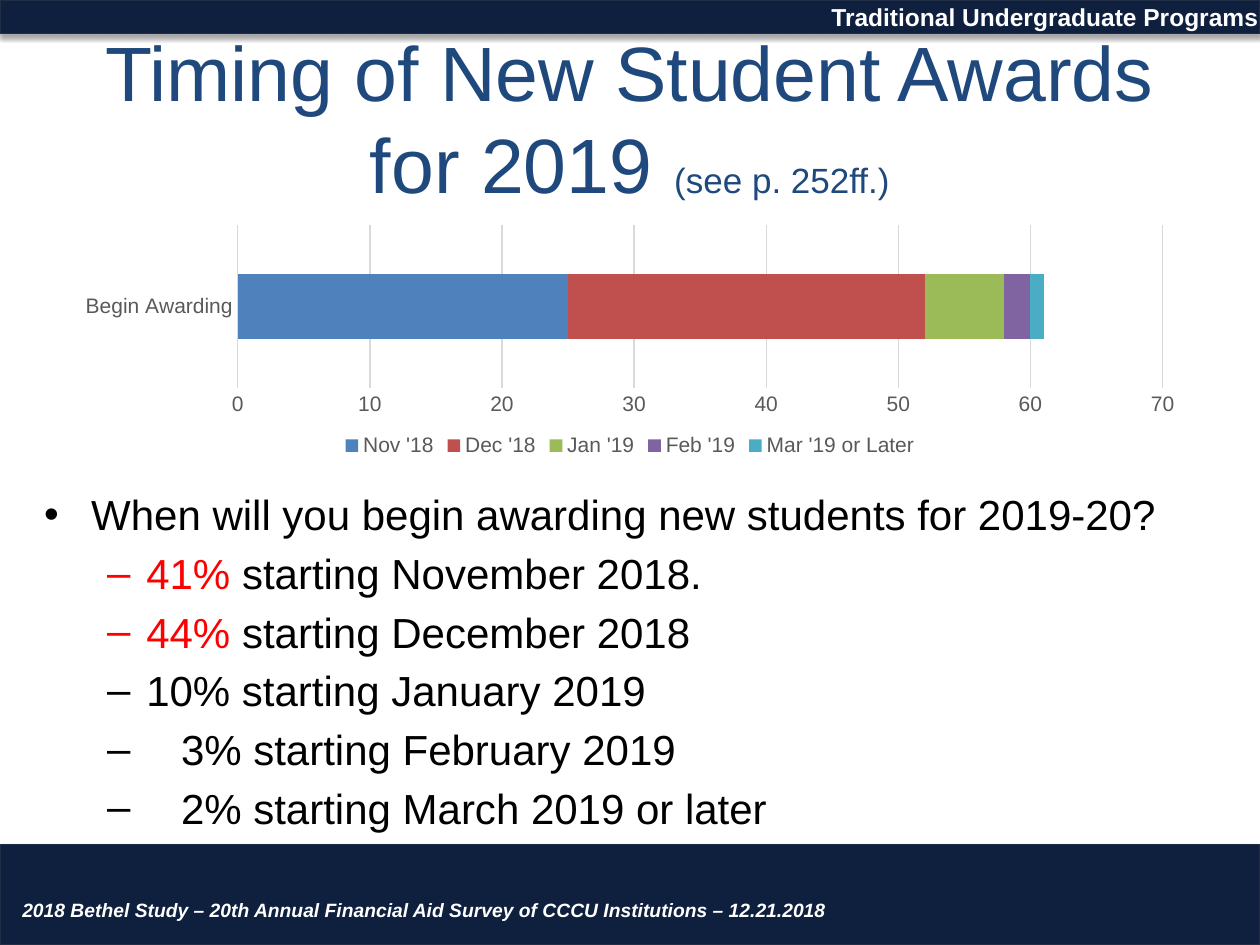
from lxml import etree
from pptx import Presentation
from pptx.chart.data import CategoryChartData
from pptx.dml.color import RGBColor
from pptx.enum.chart import XL_CHART_TYPE as ChartType, XL_LEGEND_POSITION as LegendPosition
from pptx.enum.chart import XL_TICK_MARK as TickMark
from pptx.enum.shapes import MSO_SHAPE as Preset
from pptx.enum.text import MSO_ANCHOR as Anchor, PP_ALIGN as Align
from pptx.oxml.ns import qn
from pptx.util import Cm, Pt

FONT = "Arial"
NAVY, NAVY_EDGE, TITLE_BLUE = "0E203E", "222D46", "1F497D"
BLACK, WHITE, RED, GREY, PALE = "000000", "FFFFFF", "FF0000", "595959", "D9D9D9"

BARS = [(0, 0, 25.4, 0.68), (0, 17.02, 25.4, 2.03)]
TITLE = [("Timing of New Student Awards for 2019 ", {"size": 44}),
         ("(see p. 252ff.)", {"size": 20})]
FOOTER = "2018 Bethel Study – 20th Annual Financial Aid Survey of CCCU Institutions – 12.21.2018"
HEADER = "Traditional Undergraduate Programs"

CATEGORY = "Begin Awarding"
SERIES = [
    ("Nov '18", 25, "4F81BD"),
    ("Dec '18", 27, "C0504D"),
    ("Jan '19", 6, "9BBB59"),
    ("Feb '19", 2, "8064A2"),
    ("Mar '19 or Later", 1, "4BACC6"),
]

# Bullet style: character, level, text start and hanging distance in cm
QUESTION = ("•", 0, 0.95, 0.95)
ANSWER = ("–", 1, 2.06, 0.79)
SMALL_ANSWER = ("–", 1, 2.76, 1.49)
HIGHLIGHT = {"color": RED}
BULLETS = [
    (QUESTION, [("When will you begin awarding new students for 2019-20?", {})]),
    (ANSWER, [("41%", HIGHLIGHT), (" starting November 2018.", {})]),
    (ANSWER, [("44% ", HIGHLIGHT), ("starting December 2018", {})]),
    (ANSWER, [("10% starting January 2019", {})]),
    (SMALL_ANSWER, [("3% starting February 2019", {})]),
    (SMALL_ANSWER, [("2% starting March 2019 or later", {})]),
]


def rgb(value):
    return RGBColor.from_string(value)


def set_font(font, size, color, bold=False, italic=False):
    font.name, font.size = FONT, Pt(size)
    font.bold, font.italic = bold, italic
    font.color.rgb = rgb(color)


def write(paragraph, text, size=24, color=BLACK, bold=False, italic=False):
    run = paragraph.add_run()
    run.text = text
    set_font(run.font, size, color, bold, italic)


def add_text_frame(slide, box, anchor=Anchor.TOP):
    frame = slide.shapes.add_textbox(*map(Cm, box)).text_frame
    frame.word_wrap = True
    frame.vertical_anchor = anchor
    return frame


def add_bar(slide, box):
    """Add a navy band with a soft shadow below it."""
    shape = slide.shapes.add_shape(Preset.RECTANGLE, *map(Cm, box))
    shape.shadow.inherit = False
    shape.fill.solid()
    shape.fill.fore_color.rgb = rgb(NAVY)
    shape.line.color.rgb = rgb(NAVY_EDGE)
    shape.line.width = Pt(0.75)
    effects = shape._element.spPr.find(qn("a:effectLst"))
    shadow = etree.SubElement(effects, qn("a:outerShdw"), blurRad=str(Pt(3.1)),
                              dist=str(Pt(1.8)), dir="5400000", rotWithShape="0")
    color = etree.SubElement(shadow, qn("a:srgbClr"), val=BLACK)
    etree.SubElement(color, qn("a:alpha"), val="35000")


def set_bullet(paragraph, character, level, start, hanging):
    paragraph.level = level
    properties = paragraph._p.get_or_add_pPr()
    properties.set("marL", str(Cm(start)))
    properties.set("indent", str(-Cm(hanging)))
    etree.SubElement(properties, qn("a:buFont"), typeface=FONT)
    etree.SubElement(properties, qn("a:buChar"), char=character)


def add_bullets(slide, box):
    frame = add_text_frame(slide, box)
    for index, (style, runs) in enumerate(BULLETS):
        paragraph = frame.add_paragraph() if index else frame.paragraphs[0]
        set_bullet(paragraph, *style)
        paragraph.space_before = Pt(4.7 if index else 0)
        for text, style_changes in runs:
            write(paragraph, text, **style_changes)


def add_award_chart(slide, box):
    data = CategoryChartData()
    data.categories = [CATEGORY]
    for name, value, _ in SERIES:
        data.add_series(name, [value])
    chart = slide.shapes.add_chart(ChartType.BAR_STACKED, *map(Cm, box), data).chart
    chart.has_title = False
    set_font(chart.font, 12, GREY)

    plot = chart.plots[0]
    plot.gap_width, plot.overlap = 150, 100
    plot.vary_by_categories = False
    for series, (_, _, color) in zip(plot.series, SERIES):
        series.format.fill.solid()
        series.format.fill.fore_color.rgb = rgb(color)

    category_axis, value_axis = chart.category_axis, chart.value_axis
    for axis in (category_axis, value_axis):
        axis.major_tick_mark = axis.minor_tick_mark = TickMark.NONE
        set_font(axis.tick_labels.font, 12, GREY)
    value_axis.has_major_gridlines = True
    value_axis.format.line.fill.background()
    for line in (category_axis.format.line, value_axis.major_gridlines.format.line):
        line.color.rgb = rgb(PALE)
        line.width = Pt(0.75)

    chart.has_legend = True
    chart.legend.position = LegendPosition.BOTTOM
    chart.legend.include_in_layout = False
    set_font(chart.legend.font, 12, GREY)


def main():
    presentation = Presentation()
    presentation.slide_width, presentation.slide_height = Cm(25.4), Cm(19.05)
    slide = presentation.slides.add_slide(presentation.slide_layouts[6])

    for box in BARS:
        add_bar(slide, box)

    title = add_text_frame(slide, (1.27, 0.76, 22.86, 3.18), Anchor.MIDDLE).paragraphs[0]
    title.alignment = Align.CENTER
    for text, style in TITLE:
        write(title, text, color=TITLE_BLUE, **style)

    add_award_chart(slide, (1.27, 4.43, 22.86, 4.88))
    add_bullets(slide, (0.64, 9.73, 24.33, 7.29))

    footer = add_text_frame(slide, (0.2, 17.98, 18.62, 0.69))
    write(footer.paragraphs[0], FOOTER, size=11, color=WHITE, bold=True, italic=True)
    header = add_text_frame(slide, (16.51, -0.08, 9.96, 0.86))
    write(header.paragraphs[0], HEADER, size=14, color=WHITE, bold=True)

    presentation.save("out.pptx")


if __name__ == "__main__":
    main()
